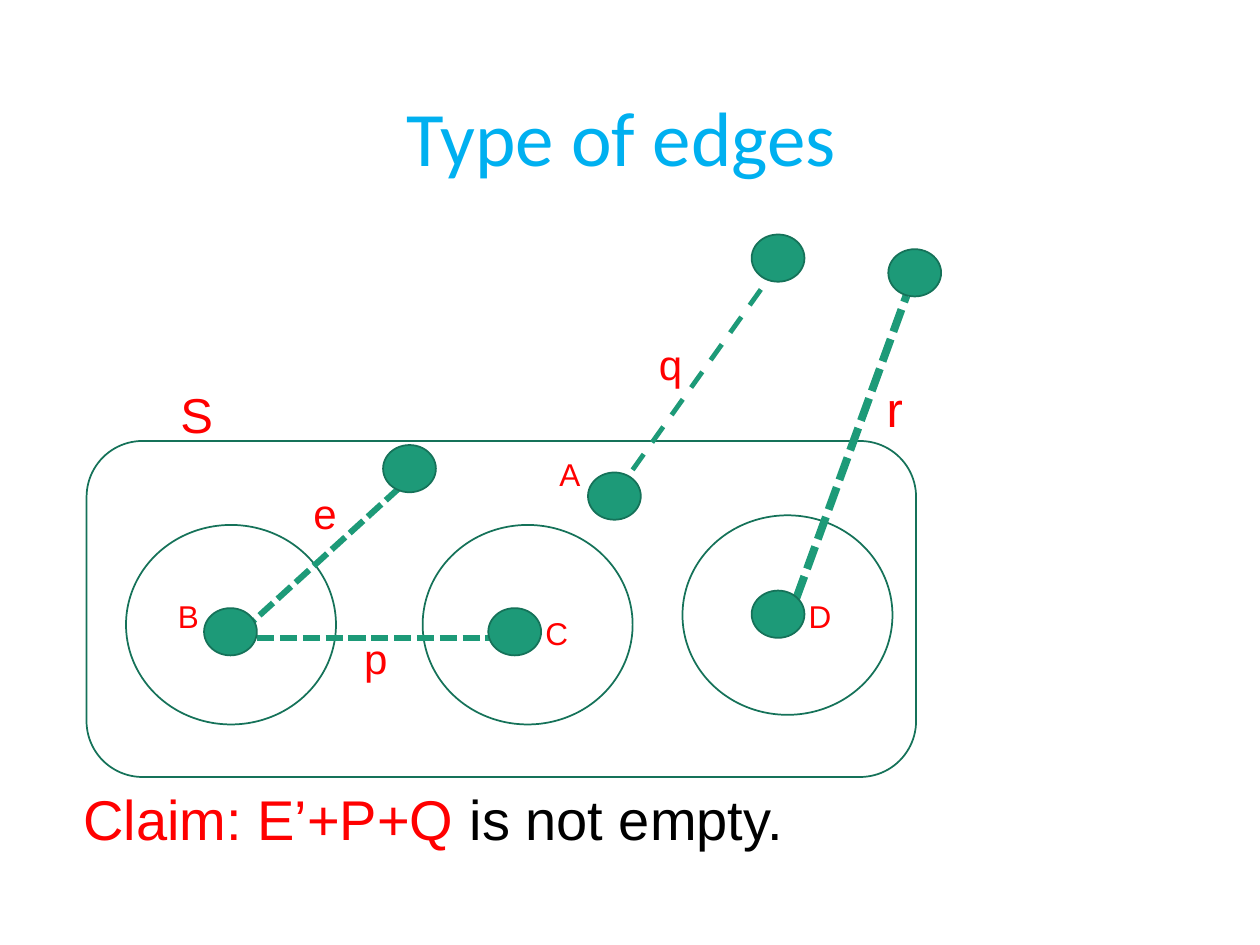
import pptx
import pptx.dml.color
import pptx.enum.dml
import pptx.enum.shapes
import pptx.enum.text
import pptx.oxml
import pptx.oxml.ns
import pptx.util

Pt = pptx.util.Pt
RGBColor = pptx.dml.color.RGBColor
Shape = pptx.enum.shapes.MSO_SHAPE
Dash = pptx.enum.dml.MSO_LINE

GREEN = RGBColor(0x1D, 0x9A, 0x78)
DARK_GREEN = RGBColor(0x15, 0x72, 0x59)
RED = RGBColor(0xFF, 0x00, 0x00)
BLACK = RGBColor(0x00, 0x00, 0x00)
SKY_BLUE = RGBColor(0x00, 0xB0, 0xF0)

COMPONENT_SIZE = (120, 114)
NODE_SIZE = (30.2, 27)

# left, top
COMPONENTS = [(72, 300), (241.5, 300), (390, 294.5)]
NODES = [(116.6, 347.5), (279, 347.5), (429.5, 337.5), (336, 270),
         (218.9, 254.3), (429.5, 134), (507.6, 142.4)]

# start x, start y, end x, end y, width, dash
EDGES = [
    (361.5, 268.5, 450, 144, 2.75, Dash.DASH),
    (138, 361, 234, 273.5, 3.5, Dash.SQUARE_DOT),
    (147, 364.5, 304.5, 364.5, 3.25, Dash.SQUARE_DOT),
    (455, 342, 518, 169, 4.5, Dash.SQUARE_DOT),
]

# text, left, top, width, height, size
LABELS = [
    ("S", 96, 216, 222, 41, 28),
    ("A", 312.5, 256.5, 54, 30, 18),
    ("B", 94.5, 337.5, 54, 30, 18),
    ("C", 304.5, 347.5, 54, 30, 18),
    ("D", 455, 337.5, 54, 30, 18),
    ("e", 172, 275, 180, 36, 24),
    ("q", 369.5, 190, 180, 36, 24),
    ("p", 201, 358, 60, 36, 24),
    ("r", 499.5, 213, 93, 41, 28),
]


class DiagramSlide:
    font = "Arial"
    title_font = "Calibri"

    def __init__(self, presentation):
        layout = presentation.slide_layouts.get_by_name("Title Only")
        self.slide = presentation.slides.add_slide(layout)
        self.shapes = self.slide.shapes

    def format_run(self, run, font, size, color):
        run.font.name = font
        run.font.size = Pt(size)
        run.font.color.rgb = color

    def title(self, text, left, top, width, height):
        title = self.shapes.title
        title.left, title.top = Pt(left), Pt(top)
        title.width, title.height = Pt(width), Pt(height)
        title.text_frame.text = text
        title.text_frame.vertical_anchor = pptx.enum.text.MSO_ANCHOR.MIDDLE
        paragraph = title.text_frame.paragraphs[0]
        paragraph.alignment = pptx.enum.text.PP_ALIGN.CENTER
        paragraph.line_spacing = 0.9
        self.format_run(paragraph.runs[0], self.title_font, 44, SKY_BLUE)

    def outline(self, kind, left, top, width, height, fill=None):
        shape = self.shapes.add_shape(kind, Pt(left), Pt(top), Pt(width), Pt(height))
        shape.shadow.inherit = False
        if fill is None:
            shape.fill.background()
        else:
            shape.fill.solid()
            shape.fill.fore_color.rgb = fill
        shape.line.color.rgb = DARK_GREEN
        shape.line.width = Pt(1)

    def edge(self, start_x, start_y, end_x, end_y, width, dash):
        connector = self.shapes.add_connector(
            pptx.enum.shapes.MSO_CONNECTOR.STRAIGHT,
            Pt(start_x), Pt(start_y), Pt(end_x), Pt(end_y))
        connector.line.color.rgb = GREEN
        connector.line.width = Pt(width)
        connector.line.dash_style = dash
        properties = connector._element.spPr
        properties.append(pptx.oxml.parse_xml(
            "<a:effectLst %s/>" % pptx.oxml.ns.nsdecls("a")))

    def text(self, parts, left, top, width, height, size):
        """Add one paragraph made of (text, color) parts."""
        box = self.shapes.add_textbox(Pt(left), Pt(top), Pt(width), Pt(height))
        box.text_frame.word_wrap = True
        paragraph = box.text_frame.paragraphs[0]
        for words, color in parts:
            run = paragraph.add_run()
            run.text = words
            self.format_run(run, self.font, size, color)


def main():
    presentation = pptx.Presentation()
    presentation.slide_width, presentation.slide_height = Pt(720), Pt(540)
    diagram = DiagramSlide(presentation)

    diagram.title("Type of edges ", 49.5, 28.75, 621, 104.4)
    diagram.outline(Shape.ROUNDED_RECTANGLE, 49.5, 252, 474, 192)
    for position in COMPONENTS:
        diagram.outline(Shape.OVAL, *position, *COMPONENT_SIZE)
    for edge in EDGES:
        diagram.edge(*edge)
    for position in NODES:
        diagram.outline(Shape.OVAL, *position, *NODE_SIZE, fill=GREEN)
    for words, *place in LABELS:
        diagram.text([(words, RED)], *place)
    diagram.text([("Claim: E’+P+Q ", RED), ("is not empty.", BLACK)],
                 40.5, 445, 582, 67.5, 32)

    presentation.save("out.pptx")


if __name__ == "__main__":
    main()
